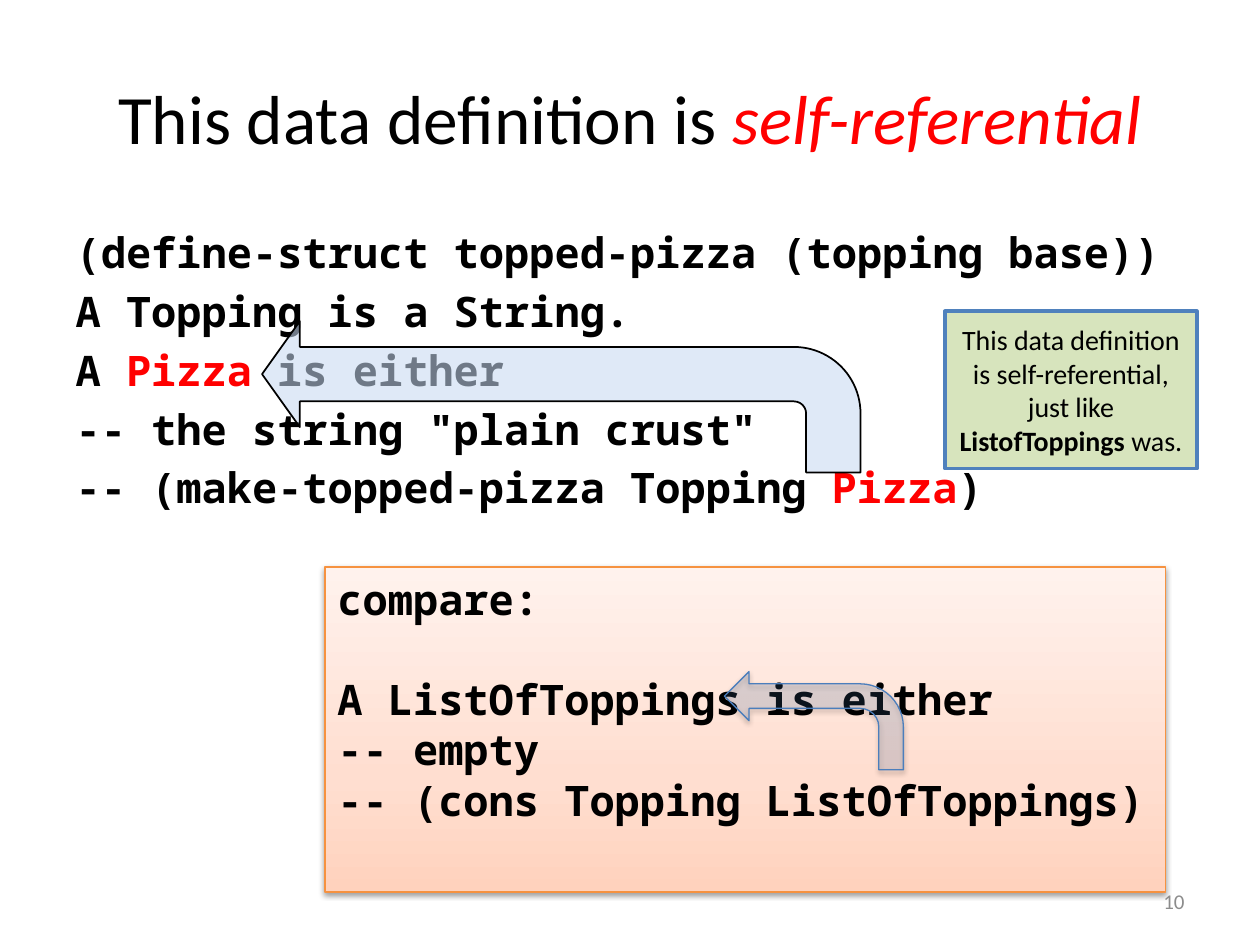
from dataclasses import dataclass
from typing import Optional

from lxml.etree import SubElement
from pptx import Presentation
from pptx.dml.color import RGBColor
from pptx.enum.shapes import MSO_SHAPE as Shape
from pptx.enum.text import MSO_ANCHOR as Anchor, PP_ALIGN as Align
from pptx.oxml.ns import qn
from pptx.util import Inches, Pt

BLACK = RGBColor(0x00, 0x00, 0x00)
RED = RGBColor(0xFF, 0x00, 0x00)
GRAY = RGBColor(0x8C, 0x8C, 0x8C)
PALE_BLUE = RGBColor(0xC6, 0xD9, 0xF1)
BLUE = RGBColor(0x4F, 0x81, 0xBD)
DARK_BLUE = RGBColor(0x4B, 0x7E, 0xBC)
GREEN = RGBColor(0xD7, 0xE4, 0xBD)
ORANGE = RGBColor(0xF6, 0x92, 0x40)
PEACH_STOPS = ((0, RGBColor(0xFF, 0xD2, 0xBD)),
               (35, RGBColor(0xFF, 0xDE, 0xD0)),
               (100, RGBColor(0xFF, 0xF2, 0xED)))

CODE = {"name": "Noto Sans Mono", "size": Pt(24), "bold": True}
TITLE = {"name": "Calibri", "size": Pt(39.6)}
NOTE = {"name": "Calibri", "size": Pt(16)}
NUMBER = {"name": "Calibri", "size": Pt(12)}


@dataclass(frozen=True)
class Run:
    text: str
    color: RGBColor = BLACK
    bold: Optional[bool] = None
    italic: Optional[bool] = None


@dataclass(frozen=True)
class Box:
    left: float
    top: float
    width: float
    height: float

    def emu(self) -> tuple:
        return tuple(map(Inches, (self.left, self.top, self.width, self.height)))


@dataclass(frozen=True)
class Arrow:
    box: Box
    adjustments: tuple
    fill: RGBColor
    opacity: int
    line: RGBColor
    line_width: float
    shadow: bool


TITLE_RUNS = [Run("This data definition is "), Run("self-referential", RED, italic=True)]
PIZZA = Run("Pizza", RED)
DEFINITION = [
    [Run("(define-struct topped-pizza (topping base))")],
    [Run("A Topping is a String.")],
    [Run("A "), PIZZA, Run(" is either")],
    [Run('-- the string "plain crust"')],
    [Run("-- (make-topped-pizza Topping "), PIZZA, Run(")")],
]
COMPARISON = [[Run(line)] for line in (
    "compare:",
    "A ListOfToppings is either",
    "-- empty",
    "-- (cons Topping ListOfToppings)",
)]
NOTE_RUNS = [Run("This data definition is self-referential, just like "),
             Run("ListofToppings", bold=True), Run(" was.")]
PIZZA_ARROW = Arrow(Box(2.08, 2.55, 4.75, 1.2), (0.36, 0.35, 0.25, 0.44),
                    PALE_BLUE, 56, BLACK, 1, False)
LIST_ARROW = Arrow(Box(5.75, 5.33, 1.42, 0.78), (0.25, 0.25, 0.25, 0.44),
                   BLUE, 15, DARK_BLUE, 0.75, True)


def write(frame, paragraphs: list, style: dict, align=Align.LEFT, anchor=Anchor.TOP) -> None:
    frame.word_wrap = True
    frame.vertical_anchor = anchor
    for index, runs in enumerate(paragraphs):
        paragraph = frame.paragraphs[0] if index == 0 else frame.add_paragraph()
        paragraph.alignment = align
        for part in runs:
            run = paragraph.add_run()
            run.text = part.text
            run.font.color.rgb = part.color
            emphasis = {"bold": part.bold, "italic": part.italic}
            values = style | {k: v for k, v in emphasis.items() if v is not None}
            for attribute, value in values.items():
                setattr(run.font, attribute, value)


def add_outlined(shapes, kind, box: Box, line: RGBColor, width: float):
    shape = shapes.add_shape(kind, *box.emu())
    shape.shadow.inherit = False
    shape.line.color.rgb = line
    shape.line.width = Pt(width)
    return shape


def add_color(parent, color: RGBColor, opacity: int = 100) -> None:
    node = SubElement(parent, qn("a:srgbClr"), val=str(color))
    if opacity < 100:
        SubElement(node, qn("a:alpha"), val=str(opacity * 1000))


def cast_shadow(shape) -> None:
    effects = shape.element.spPr.find(qn("a:effectLst"))
    shadow = SubElement(effects, qn("a:outerShdw"), blurRad=str(Pt(3.1)),
                        dist=str(Pt(1.6)), dir="5400000", rotWithShape="0")
    add_color(shadow, BLACK, 38)


def fill_gradient(shape, stops: tuple) -> None:
    shape.fill.gradient()
    shape.fill.gradient_angle = 90
    stop_list = shape.element.spPr.find(".//" + qn("a:gsLst"))
    for old in list(stop_list):
        stop_list.remove(old)
    for percent, color in stops:
        add_color(SubElement(stop_list, qn("a:gs"), pos=str(percent * 1000)), color)


def add_arrow(shapes, arrow: Arrow) -> None:
    """Add a bent arrow that points left."""
    shape = add_outlined(shapes, Shape.BENT_ARROW, arrow.box, arrow.line, arrow.line_width)
    shape.element.spPr.xfrm.set("flipH", "1")
    for index, value in enumerate(arrow.adjustments):
        shape.adjustments[index] = value
    shape.fill.solid()
    shape.fill.fore_color.rgb = arrow.fill
    color = shape.element.spPr.find(qn("a:solidFill")).find(qn("a:srgbClr"))
    SubElement(color, qn("a:alpha"), val=str(arrow.opacity * 1000))
    if arrow.shadow:
        cast_shadow(shape)


def place(placeholder, box: Box):
    placeholder.left, placeholder.top, placeholder.width, placeholder.height = box.emu()
    return placeholder.text_frame


def add_definition(placeholder) -> None:
    frame = place(placeholder, Box(0.5, 1.75, 9, 4.95))
    write(frame, DEFINITION, CODE)
    for paragraph in frame.paragraphs:
        properties = paragraph._p.get_or_add_pPr()
        properties.set("marL", str(Inches(0.38)))
        properties.set("indent", str(Inches(-0.38)))
        spacing = SubElement(properties, qn("a:spcBef"))
        SubElement(spacing, qn("a:spcPct"), val="20000")
        SubElement(properties, qn("a:buNone"))


def add_comparison(shapes) -> None:
    panel = add_outlined(shapes, Shape.RECTANGLE, Box(2.58, 4.5, 6.67, 2.58), ORANGE, 0.75)
    fill_gradient(panel, PEACH_STOPS)
    cast_shadow(panel)
    write(panel.text_frame, COMPARISON, CODE)
    panel.text_frame.paragraphs[1].space_before = Pt(28.5)
    add_arrow(shapes, LIST_ARROW)


def main() -> None:
    deck = Presentation()
    deck.slide_width, deck.slide_height = Inches(10), Inches(7.5)
    slide = deck.slides.add_slide(deck.slide_layouts[1])
    shapes = slide.shapes

    title = place(shapes.title, Box(0.5, 0.3, 9, 1.25))
    write(title, [TITLE_RUNS], TITLE, Align.CENTER, Anchor.MIDDLE)
    add_definition(slide.placeholders[1])
    add_arrow(shapes, PIZZA_ARROW)
    add_comparison(shapes.add_group_shape().shapes)

    note = add_outlined(shapes, Shape.RECTANGLE, Box(7.5, 2.47, 2, 1.25), BLUE, 2)
    note.fill.solid()
    note.fill.fore_color.rgb = GREEN
    write(note.text_frame, [NOTE_RUNS], NOTE, Align.CENTER, Anchor.MIDDLE)

    number = shapes.add_textbox(*Box(7.17, 6.95, 2.33, 0.4).emu())
    write(number.text_frame, [[Run("10", GRAY)]], NUMBER, Align.RIGHT, Anchor.MIDDLE)

    deck.save("out.pptx")


if __name__ == "__main__":
    main()
